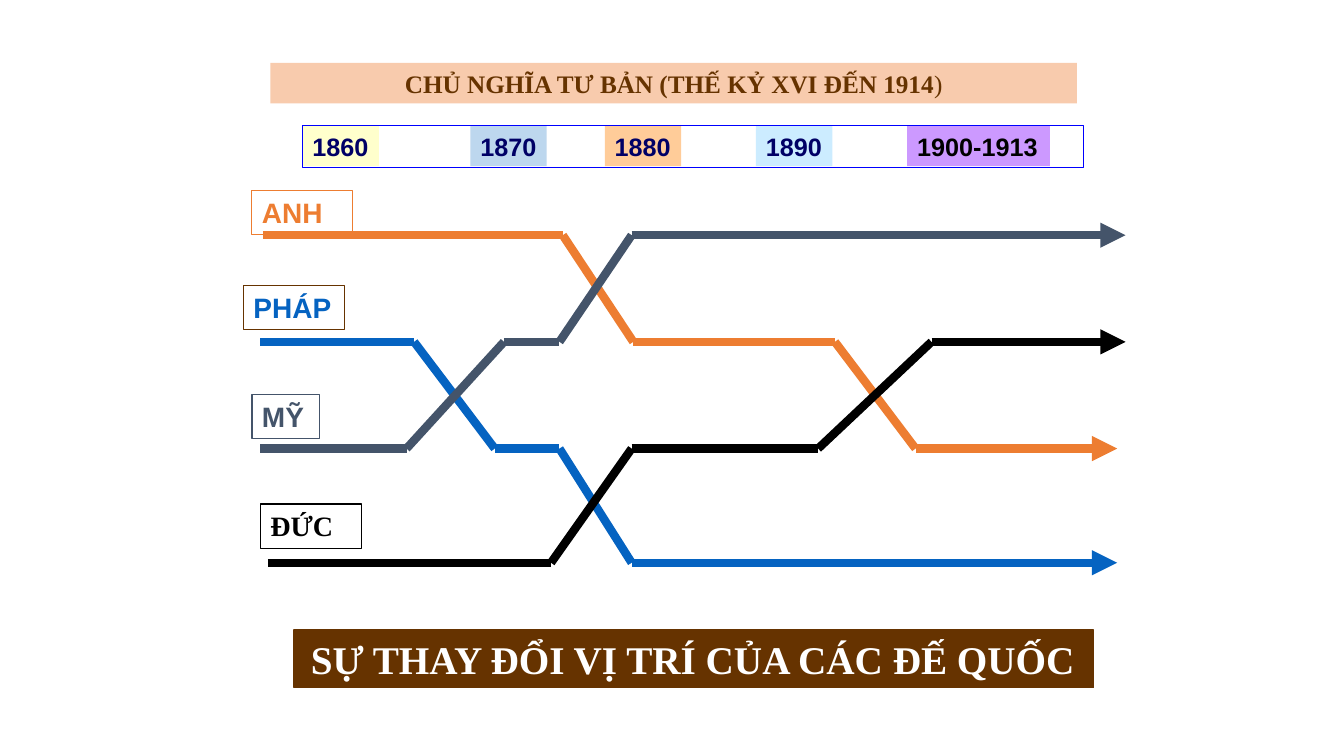
from lxml import etree
from pptx import Presentation
from pptx.dml.color import RGBColor
from pptx.enum.shapes import MSO_CONNECTOR, MSO_SHAPE
from pptx.enum.text import MSO_ANCHOR, PP_ALIGN
from pptx.oxml.ns import qn
from pptx.util import Pt

RECT = MSO_SHAPE.RECTANGLE
STRAIGHT = MSO_CONNECTOR.STRAIGHT
TOP = MSO_ANCHOR.TOP
LEFT, CENTER = PP_ALIGN.LEFT, PP_ALIGN.CENTER
SANS, SERIF = "Arial", "Times New Roman"

HUES = {
    "orange": "ED7D31", "blue": "0563C1", "slate": "44546A",
    "black": "000000", "white": "FFFFFF", "brown": "663300",
    "navy": "000066", "frame": "0000FF", "peach": "F8CBAD",
    "cream": "FFFFCC", "sky": "BDD7EE", "apricot": "FFCC99",
    "ice": "CCECFF", "violet": "CC99FF",
}

deck = Presentation()
# The slide is a grid of 160 columns and 90 rows of square cells.
CELL = 76200
deck.slide_width, deck.slide_height = 160 * CELL, 90 * CELL
slide = deck.slides.add_slide(deck.slide_layouts[6])


def rgb(hue):
    return RGBColor.from_string(HUES[hue])


def box(place, text="", size=18, font=SANS, ink="black", fill=None, edge=None, align=LEFT):
    """Add a rectangle; place is left, top, width and height in grid cells."""
    shape = slide.shapes.add_shape(RECT, *[round(n * CELL) for n in place])
    shape.shadow.inherit = False
    if fill:
        shape.fill.solid()
        shape.fill.fore_color.rgb = rgb(fill)
    else:
        shape.fill.background()
    if edge:
        shape.line.color.rgb = rgb(edge)
        shape.line.width = Pt(0.75)
    else:
        shape.line.fill.background()
    frame = shape.text_frame
    frame.vertical_anchor = TOP
    if text:
        frame.text = text
        para = frame.paragraphs[0]
        para.alignment = align
        for run in para.runs:
            run.font.size, run.font.name, run.font.bold = Pt(size), font, True
            run.font.color.rgb = rgb(ink)
    return shape


# Years
YEARS = [
    (36, 9.1, "1860", "navy", "cream"),
    (56, 9.1, "1870", "navy", "sky"),
    (72, 9.1, "1880", "navy", "apricot"),
    (90, 9.1, "1890", "navy", "ice"),
    (108, 17, "1900-1913", "black", "violet"),
]
for left, width, year, ink, fill in YEARS:
    box((left, 15, width, 4.8), year, ink=ink, fill=fill)

# Closing banner
banner = box((35, 75, 95.2, 6.9), "SỰ THAY ĐỔI VỊ TRÍ CỦA CÁC ĐẾ QUỐC", 28, SERIF,
             "white", "brown", "brown")
banner.text_frame.word_wrap = False
banner.text_frame.margin_left = 2 * CELL

# Each power moves between four ranks: (column, rank) at every bend
RANKS = [28, 40.7, 53.4, 67]
TRACKS = {
    "blue": [(31, 1), (49.3, 1), (58.9, 2), (66.6, 2), (75.2, 3), (133, 3)],
    "orange": [(31.3, 0), (67, 0), (75.4, 1), (99.4, 1), (109, 2), (133, 2)],
    "slate": [(31, 2), (48.4, 2), (60, 1), (66.6, 1), (75.2, 0), (134, 0)],
    "black": [(31.9, 3), (65.6, 3), (75.2, 2), (97.4, 2), (110.9, 1), (134, 1)],
}
for hue, bends in TRACKS.items():
    spots = [(round(col * CELL), round(RANKS[rank] * CELL)) for col, rank in bends]
    for start, end in zip(spots, spots[1:]):
        link = slide.shapes.add_connector(STRAIGHT, *start, *end)
        link.line.color.rgb = rgb(hue)
        link.line.width = Pt(6)
        if end == spots[-1]:
            etree.SubElement(link.line._get_or_add_ln(), qn("a:tailEnd"), type="triangle")
        etree.SubElement(link._element.spPr, qn("a:effectLst"))

# Country labels
LABELS = [
    (30, 22.7, 12, "ANH", SANS, "orange", "orange"),
    (29, 34, 12, "PHÁP", SANS, "blue", "brown"),
    (30, 47, 8, "MỸ", SANS, "slate", "slate"),
    (31, 60, 12, "ĐỨC", SERIF, "black", "black"),
]
for left, top, width, name, font, ink, edge in LABELS:
    box((left, top, width, 5.25), name, 20, font, ink, edge=edge)

# Title, with a light closing bracket
title = box((32.2, 7.5, 96, 4.8), "CHỦ NGHĨA TƯ BẢN (THẾ KỶ XVI ĐẾN 1914", 18, SERIF,
            "brown", "peach", align=CENTER)
tail = title.text_frame.paragraphs[0].add_run()
tail.text = ")"
tail.font.size, tail.font.name, tail.font.bold = Pt(18), SERIF, False
tail.font.color.rgb = rgb("brown")

# Frame around the years
box((36, 15, 93, 5), edge="frame")

deck.save("out.pptx")
